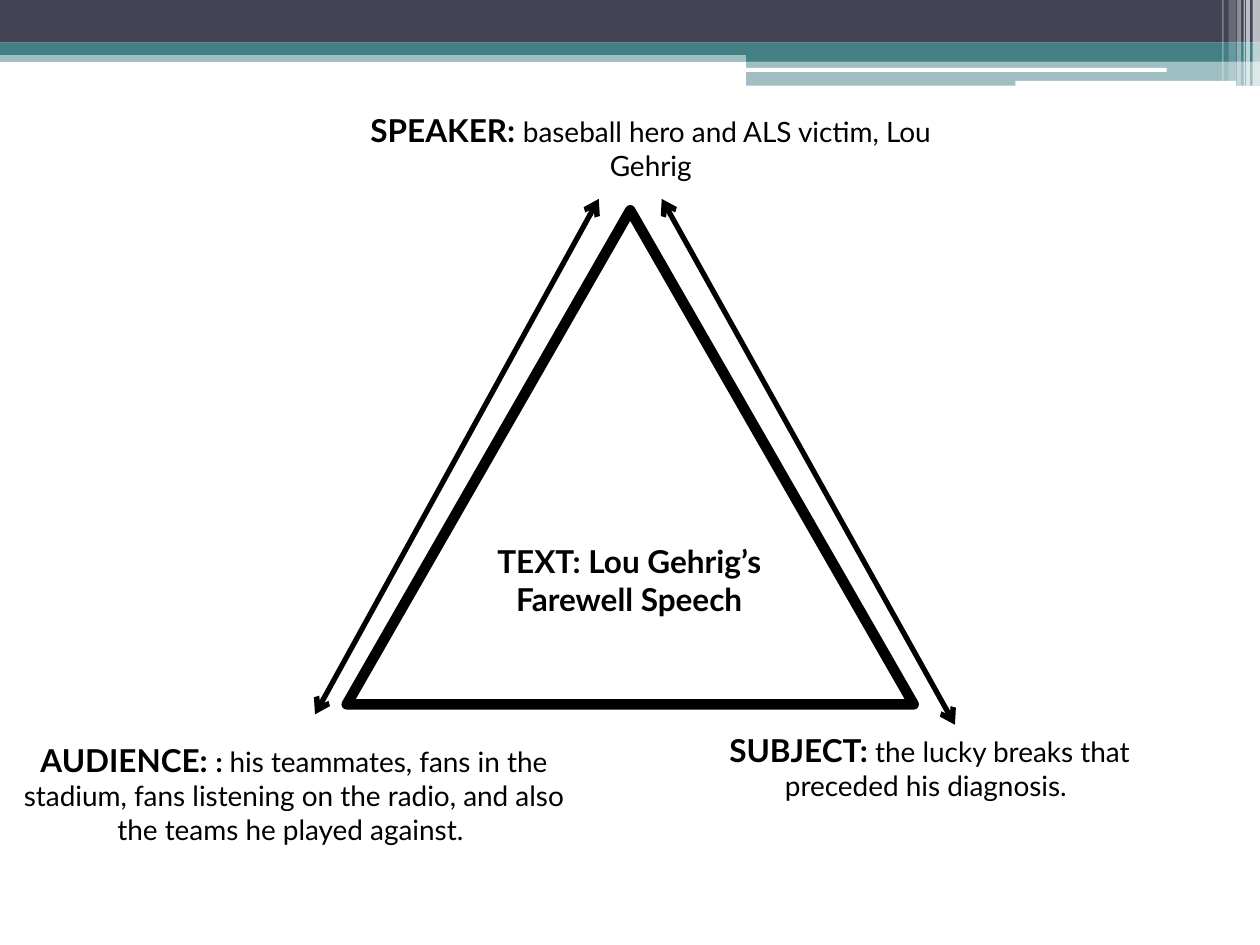
from dataclasses import dataclass
from typing import Optional

from lxml import etree
from pptx import Presentation
from pptx import util as u
from pptx.dml.color import RGBColor
from pptx.enum import shapes, text
from pptx.oxml import ns

Cm, Pt = u.Cm, u.Pt
KIND = shapes.MSO_SHAPE


@dataclass(frozen=True)
class Theme:
    navy: str = "424456"
    teal: str = "438086"
    white: str = "FFFFFF"
    ink: str = "000000"
    font: str = "Lato"
    heading: int = 18
    body: int = 16
    outline: int = 6
    arrow: int = 3


@dataclass(frozen=True)
class Box:
    x: float
    y: float
    w: float
    h: float


@dataclass(frozen=True)
class Band:
    box: Box
    color: str
    alpha: Optional[int] = None
    rounded: bool = False


@dataclass(frozen=True)
class Run:
    text: str
    size: int
    bold: bool = False


@dataclass(frozen=True)
class Label:
    box: Box
    runs: tuple[Run, ...]


@dataclass(frozen=True)
class Arrow:
    x1: float
    y1: float
    x2: float
    y2: float


T = Theme()
WIDTH, HEIGHT = 25.4, 19.05
SPLIT = 15.04  # where the right-hand part of the header begins

BANDS = (
    Band(Box(0, 1.02, WIDTH, 0.23), T.teal, 50),
    Band(Box(0, 0, WIDTH, 0.86), T.navy),
    Band(Box(0, 0.86, WIDTH, 0.25), T.teal),
    Band(Box(SPLIT, 0.99, WIDTH - SPLIT, 0.25), T.teal),
    Band(Box(SPLIT, 1.22, WIDTH - SPLIT, 0.51), T.teal, 50),
    Band(Box(15.01, 1.37, 8.51, 0.08), T.white, rounded=True),
    Band(Box(20.47, 1.63, 4.45, 0.1), T.white, rounded=True),
)

# Header stripes: left, width, height, opacity
STRIPES = (
    (25.25, 0.15, 1.73, 65),
    (25.12, 0.08, 1.73, 65),
    (25.07, 0.03, 1.73, 60),
    (24.94, 0.08, 1.73, 40),
    (24.77, 0.15, 1.63, 20),
    (24.64, 0.03, 1.63, 30),
)

TRIANGLE = Box(6.99, 4.24, 11.43, 9.96)

LABELS = (
    Label(Box(7.19, 2.11, 11.86, 1.7), (
        Run("SPEAKER: ", T.heading, True),
        Run("baseball hero and ALS victim, Lou Gehrig", T.body))),
    Label(Box(0, 14.81, 11.86, 2.39), (
        Run("AUDIENCE: ", T.heading, True),
        Run(": ", T.body, True),
        Run("his teammates, fans in the stadium, fans listening on the radio, "
            "and also the teams he played against. ", T.body))),
    Label(Box(13.34, 14.61, 10.8, 2.49), (
        Run("SUBJECT:", T.heading, True),
        Run(" the lucky breaks that preceded his diagnosis. ", T.body))),
    Label(Box(9.09, 10.8, 7.19, 1.8), (
        Run("TEXT: Lou Gehrig’s Farewell Speech", T.heading, True),)),
)

ARROWS = (
    Arrow(12.07, 4.01, 6.35, 14.4),
    Arrow(13.34, 4.01, 19.25, 14.61),
)


def place(box: Box) -> tuple:
    return Cm(box.x), Cm(box.y), Cm(box.w), Cm(box.h)


def rgb(color: str) -> RGBColor:
    return RGBColor.from_string(color)


def add_band(s, band: Band) -> None:
    kind = KIND.ROUNDED_RECTANGLE if band.rounded else KIND.RECTANGLE
    sp = s.shapes.add_shape(kind, *place(band.box))
    sp.shadow.inherit = False
    sp.line.fill.background()
    sp.fill.solid()
    sp.fill.fore_color.rgb = rgb(band.color)
    if band.alpha is not None:
        clr = sp.fill._xPr.find(".//" + ns.qn("a:srgbClr"))
        etree.SubElement(clr, ns.qn("a:alpha"), val=str(band.alpha * 1000))


def add_triangle(s, box: Box) -> None:
    sp = s.shapes.add_shape(KIND.ISOSCELES_TRIANGLE, *place(box))
    sp.shadow.inherit = False
    sp.fill.background()
    sp.line.color.rgb = rgb(T.ink)
    sp.line.width = Pt(T.outline)
    etree.SubElement(sp.line._get_or_add_ln(), ns.qn("a:round"))


def add_label(s, label: Label) -> None:
    tf = s.shapes.add_textbox(*place(label.box)).text_frame
    tf.word_wrap = True
    tf.auto_size = text.MSO_AUTO_SIZE.SHAPE_TO_FIT_TEXT
    p = tf.paragraphs[0]
    p.alignment = text.PP_ALIGN.CENTER
    for run in label.runs:
        r = p.add_run()
        r.text = run.text
        r.font.name = T.font
        r.font.size = Pt(run.size)
        r.font.bold = run.bold
        r.font.color.rgb = rgb(T.ink)


def add_arrow(s, arrow: Arrow) -> None:
    sp = s.shapes.add_connector(
        shapes.MSO_CONNECTOR.STRAIGHT,
        Cm(arrow.x1), Cm(arrow.y1), Cm(arrow.x2), Cm(arrow.y2))
    sp.line.color.rgb = rgb(T.ink)
    sp.line.width = Pt(T.arrow)
    ln = sp.line._get_or_add_ln()
    for end in ("a:headEnd", "a:tailEnd"):
        etree.SubElement(ln, ns.qn(end), type="arrow")
    etree.SubElement(sp._element.spPr, ns.qn("a:effectLst"))


def main() -> None:
    prs = Presentation()
    prs.slide_width, prs.slide_height = Cm(WIDTH), Cm(HEIGHT)
    s = prs.slides.add_slide(prs.slide_layouts[6])

    # Header decoration
    for band in BANDS:
        add_band(s, band)
    for x, w, h, alpha in STRIPES:
        add_band(s, Band(Box(x, 0, w, h), T.white, alpha))

    # Rhetorical triangle with its labels and arrows
    add_triangle(s, TRIANGLE)
    for label in LABELS:
        add_label(s, label)
    for arrow in ARROWS:
        add_arrow(s, arrow)

    prs.save("out.pptx")


if __name__ == "__main__":
    main()
